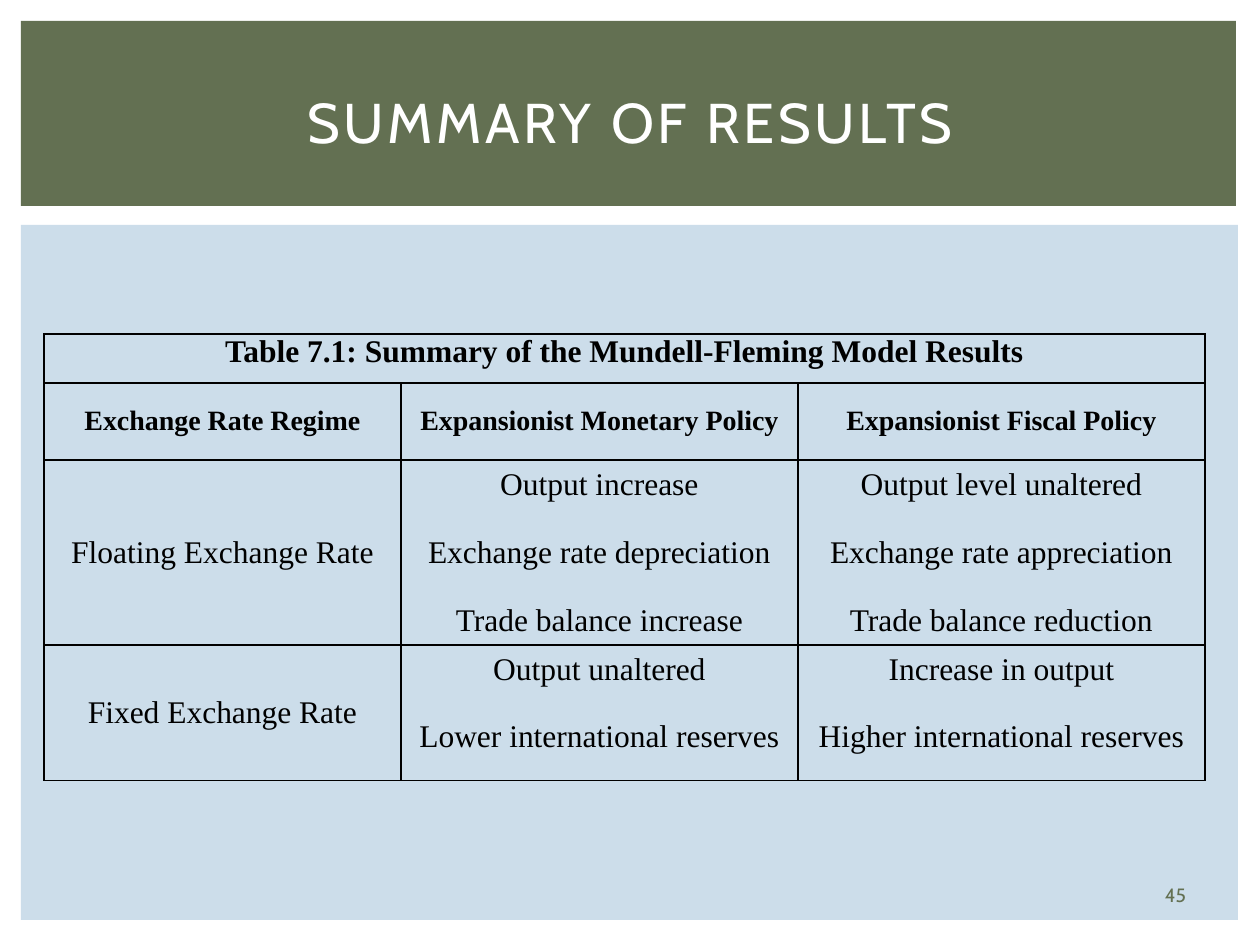
from lxml import etree
from pptx import Presentation
from pptx.dml.color import RGBColor
from pptx.enum.shapes import MSO_SHAPE
from pptx.enum.text import MSO_ANCHOR, PP_ALIGN
from pptx.oxml.ns import qn
from pptx.util import Emu, Pt

RECTANGLE = MSO_SHAPE.RECTANGLE
TOP, MIDDLE = MSO_ANCHOR.TOP, MSO_ANCHOR.MIDDLE
CENTER = PP_ALIGN.CENTER
TITLE_ONLY = 5
EMU_PER_PX = 914400 / 126
BORDER_WIDTH = Pt(1)
COLORS = {"panel": "CCDDEA", "band": "637052", "white": "FFFFFF", "black": "000000"}
HEADING_FONT, TABLE_FONT = "Cabin", "Times New Roman"

COLUMN_WIDTHS = [357, 397, 407]
ROW_HEIGHTS = [49, 77, 49, 87, 49, 49, 87]
HEADER_ROWS = 2
# First and last row of each block that is framed as a whole
ROW_BLOCKS = [(0, 0), (1, 1), (2, 4), (5, 6)]
ROWS = [
    ["Table 7.1: Summary of the Mundell-Fleming Model Results", "", ""],
    ["Exchange Rate Regime", "Expansionist Monetary Policy", "Expansionist Fiscal Policy"],
    ["Floating Exchange Rate", "Output increase", "Output level unaltered"],
    ["", "Exchange rate depreciation", "Exchange rate appreciation"],
    ["", "Trade balance increase", "Trade balance reduction"],
    ["Fixed Exchange Rate", "Output unaltered", "Increase in output"],
    ["", "Lower international reserves", "Higher international reserves"],
]


def px(value):
    return Emu(round(value * EMU_PER_PX))


def color(name):
    return RGBColor.from_string(COLORS[name])


def write_text(text_frame, text, font_name, size, color_name, bold=False):
    text_frame.text = text
    paragraph = text_frame.paragraphs[0]
    paragraph.alignment = CENTER
    for run in paragraph.runs:
        run.font.name = font_name
        run.font.size = Pt(size)
        run.font.bold = bold
        run.font.color.rgb = color(color_name)


def add_panel(slide, left, top, width, height, color_name):
    shape = slide.shapes.add_shape(RECTANGLE, px(left), px(top), px(width), px(height))
    shape.shadow.inherit = False
    shape.fill.solid()
    shape.fill.fore_color.rgb = color(color_name)
    shape.line.fill.background()


def set_title(slide, text):
    title = slide.shapes.title
    title.left, title.top, title.width, title.height = px(53), px(49), px(1155), px(145)
    write_text(title.text_frame, text, HEADING_FONT, 32, "white")
    title.text_frame.vertical_anchor = MIDDLE
    title.text_frame.paragraphs[0].runs[0].font._element.set("spc", "200")
    # The title lies in front of the band
    title.element.getparent().append(title.element)


def set_borders(cell, sides):
    """Draw the sides named in sides (of L, R, T, B) and hide the others."""
    properties = cell._tc.get_or_add_tcPr()
    for side in "LRTB":
        line = etree.SubElement(properties, qn(f"a:ln{side}"), w=str(BORDER_WIDTH))
        if side in sides:
            fill = etree.SubElement(line, qn("a:solidFill"))
            etree.SubElement(fill, qn("a:srgbClr"), val=COLORS["black"])
        else:
            etree.SubElement(line, qn("a:noFill"))


def format_cell(cell, text, row, sides):
    cell.margin_left = cell.margin_right = px(9)
    cell.margin_top = cell.margin_bottom = 0
    cell.vertical_anchor = TOP if row == 0 else MIDDLE
    write_text(cell.text_frame, text, TABLE_FONT, 16 if row == 1 else 18,
               "black", bold=row < HEADER_ROWS)
    set_borders(cell, sides)
    cell.fill.background()


def add_results_table(slide):
    frame = slide.shapes.add_table(
        len(ROWS), len(COLUMN_WIDTHS), px(44), px(334),
        px(sum(COLUMN_WIDTHS)), px(sum(ROW_HEIGHTS)))
    table = frame.table
    table.first_row = table.horz_banding = False
    for column, width in zip(table.columns, COLUMN_WIDTHS):
        column.width = px(width)
    for row, height in zip(table.rows, ROW_HEIGHTS):
        row.height = px(height)

    for first, last in ROW_BLOCKS:
        for row in range(first, last + 1):
            sides = "LR" + "T" * (row == first) + "B" * (row == last)
            for column, text in enumerate(ROWS[row]):
                # The regime cells span their whole block
                cell_sides = "LRTB" if column == 0 else sides
                format_cell(table.cell(row, column), text, row, cell_sides)
        if last > first:
            table.cell(first, 0).merge(table.cell(last, 0))
    table.cell(0, 0).merge(table.cell(0, len(COLUMN_WIDTHS) - 1))


def add_page_number(slide, number):
    box = slide.shapes.add_textbox(px(1135), px(876), px(81), px(38))
    box.text_frame.word_wrap = True
    box.text_frame.vertical_anchor = MIDDLE
    write_text(box.text_frame, number, HEADING_FONT, 11, "band")


def main():
    presentation = Presentation()
    presentation.slide_width, presentation.slide_height = px(1260), px(945)
    slide = presentation.slides.add_slide(presentation.slide_layouts[TITLE_ONLY])
    add_panel(slide, 21, 225, 1217, 695, "panel")
    add_panel(slide, 21, 21, 1215, 185, "band")
    add_results_table(slide)
    add_page_number(slide, "45")
    set_title(slide, "SUMMARY OF RESULTS")
    presentation.save("out.pptx")


if __name__ == "__main__":
    main()
